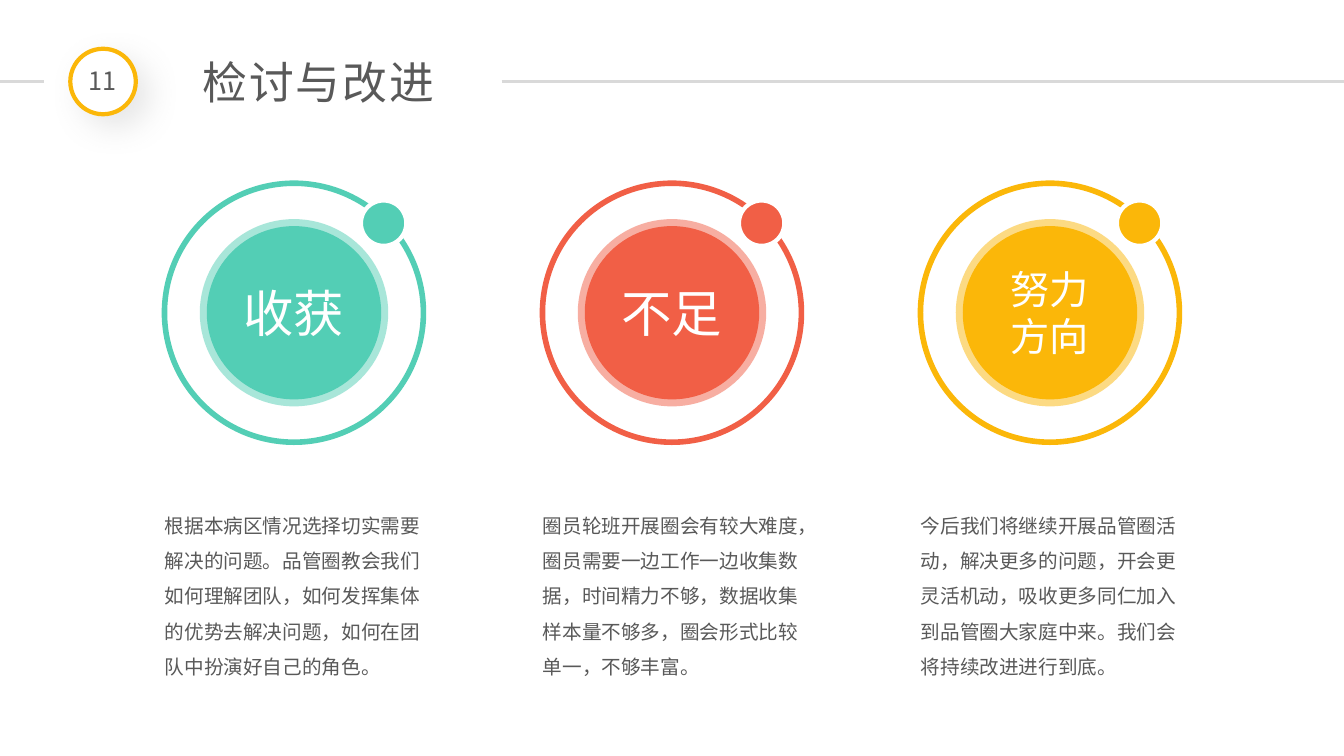
import pptx
import pptx.dml.color
import pptx.enum.shapes
import pptx.enum.text
import pptx.oxml
import pptx.oxml.ns
import pptx.util

Pt = pptx.util.Pt
RGBColor = pptx.dml.color.RGBColor
ALIGN = pptx.enum.text.PP_ALIGN
ANCHOR = pptx.enum.text.MSO_ANCHOR

TEAL = RGBColor(0x53, 0xCE, 0xB5)
CORAL = RGBColor(0xF1, 0x5F, 0x46)
AMBER = RGBColor(0xFB, 0xB7, 0x09)
WHITE = RGBColor(0xFF, 0xFF, 0xFF)
INK = RGBColor(0x59, 0x59, 0x59)
RULE = RGBColor(0xD9, 0xD9, 0xD9)
FONT = "Noto Sans CJK SC"

NUMBER = "11"
TITLE = "检讨与改进"
COLUMNS = [
    ("收获", 36, TEAL, "根据本病区情况选择切实需要解决的问题。品管圈教会我们如何理解团队，如何发挥集体的优势去解决问题，如何在团队中扮演好自己的角色。"),
    ("不足", 36, CORAL, "圈员轮班开展圈会有较大难度，圈员需要一边工作一边收集数据，时间精力不够，数据收集样本量不够多，圈会形式比较单一，不够丰富。"),
    ("努力方向", 28, AMBER, "今后我们将继续开展品管圈活动，解决更多的问题，开会更灵活机动，吸收更多同仁加入到品管圈大家庭中来。我们会将持续改进进行到底。"),
]

SLIDE_WIDTH, SLIDE_HEIGHT = 960, 540
HEADER_Y = 58.2
RULES = [(0, 31.2), (358.4, SLIDE_WIDTH)]
FIRST_CENTER, COLUMN_PITCH = 210, 270
CIRCLE_Y = 223.4
RING, DISC_WIDTH, DISC_HEIGHT, DOT = 185, 124.6, 123.8, 32.4
DOT_OFFSET_X, DOT_OFFSET_Y = 64, -64
CAPTION_TOP, CAPTION_WIDTH, CAPTION_HEIGHT = 355, 198.8, 134.6

EFFECTS = "<a:effectLst %s>%s</a:effectLst>"
BADGE_SHADOW = (
    '<a:outerShdw blurRad="%d" dist="%d" dir="2700000" algn="tl" rotWithShape="0">'
    '<a:srgbClr val="BFBFBF"><a:alpha val="36000"/></a:srgbClr></a:outerShdw>'
    % (Pt(22), Pt(12))
)

presentation = pptx.Presentation()
presentation.slide_width = Pt(SLIDE_WIDTH)
presentation.slide_height = Pt(SLIDE_HEIGHT)
slide = presentation.slides.add_slide(presentation.slide_layouts[6])


def set_effects(shape, content=""):
    properties = shape._element.spPr
    for old in properties.findall(pptx.oxml.ns.qn("a:effectLst")):
        properties.remove(old)
    properties.append(pptx.oxml.parse_xml(EFFECTS % (pptx.oxml.ns.nsdecls("a"), content)))


def add_circle(center_x, center_y, width, height, fill, line, weight, alpha=None):
    shape = slide.shapes.add_shape(
        pptx.enum.shapes.MSO_SHAPE.OVAL,
        Pt(center_x - width / 2), Pt(center_y - height / 2), Pt(width), Pt(height))
    shape.shadow.inherit = False
    if fill is None:
        shape.fill.background()
    else:
        shape.fill.solid()
        shape.fill.fore_color.rgb = fill
    shape.line.color.rgb = line
    shape.line.width = Pt(weight)
    if alpha:
        color = shape.line._ln.find(".//" + pptx.oxml.ns.qn("a:srgbClr"))
        color.append(pptx.oxml.parse_xml(
            '<a:alpha %s val="%d"/>' % (pptx.oxml.ns.nsdecls("a"), alpha * 1000)))
    return shape


def write(shape, text, size, color, frame_format, paragraph_format, spacing=0):
    frame = shape.text_frame
    paragraph = frame.paragraphs[0]
    run = paragraph.add_run()
    run.text = text
    run.font.color.rgb = color
    formats = [
        (frame, frame_format),
        (paragraph, paragraph_format),
        (run.font, {"size": Pt(size), "name": FONT}),
    ]
    for target, values in formats:
        for name, value in values.items():
            setattr(target, name, value)
    run_properties = run._r.get_or_add_rPr()
    run_properties.append(pptx.oxml.parse_xml(
        '<a:ea %s typeface="%s"/>' % (pptx.oxml.ns.nsdecls("a"), FONT)))
    if spacing:
        run_properties.set("spc", str(int(spacing * 100)))


def add_text(left, top, width, height, *text_format, wrap=True, **options):
    box = slide.shapes.add_textbox(Pt(left), Pt(top), Pt(width), Pt(height))
    text, size, paragraph_format = text_format
    frame_format = {"word_wrap": wrap, "auto_size": pptx.enum.text.MSO_AUTO_SIZE.SHAPE_TO_FIT_TEXT}
    write(box, text, size, INK, frame_format, paragraph_format, **options)


CENTERED = {"alignment": ALIGN.CENTER}

badge = add_circle(73.6, HEADER_Y, 46.8, 46.8, WHITE, AMBER, 3)
set_effects(badge, BADGE_SHADOW)
add_text(96.5, 35.3, 262, 46, TITLE, 32, CENTERED, spacing=1.5)
for start, end in RULES:
    rule = slide.shapes.add_connector(
        pptx.enum.shapes.MSO_CONNECTOR.STRAIGHT,
        Pt(start), Pt(HEADER_Y), Pt(end), Pt(HEADER_Y))
    rule.line.color.rgb = RULE
    rule.line.width = Pt(2)
    set_effects(rule)
add_text(55.4, 43.2, 36, 28.8, NUMBER, 18, CENTERED, wrap=False)

for index, (heading, heading_size, color, caption) in enumerate(COLUMNS):
    center = FIRST_CENTER + index * COLUMN_PITCH
    add_circle(center, CIRCLE_Y, RING, RING, None, color, 4)
    add_circle(center + DOT_OFFSET_X, CIRCLE_Y + DOT_OFFSET_Y, DOT, DOT, color, WHITE, 3)
    disc = add_circle(center, CIRCLE_Y, DISC_WIDTH, DISC_HEIGHT, color, color, 10, alpha=50)
    write(disc, heading, heading_size, WHITE,
          {"word_wrap": True, "vertical_anchor": ANCHOR.MIDDLE}, CENTERED)
    add_text(center - CAPTION_WIDTH / 2, CAPTION_TOP, CAPTION_WIDTH, CAPTION_HEIGHT,
             caption, 14, {"alignment": ALIGN.LEFT, "line_spacing": 1.5})

presentation.save("out.pptx")
